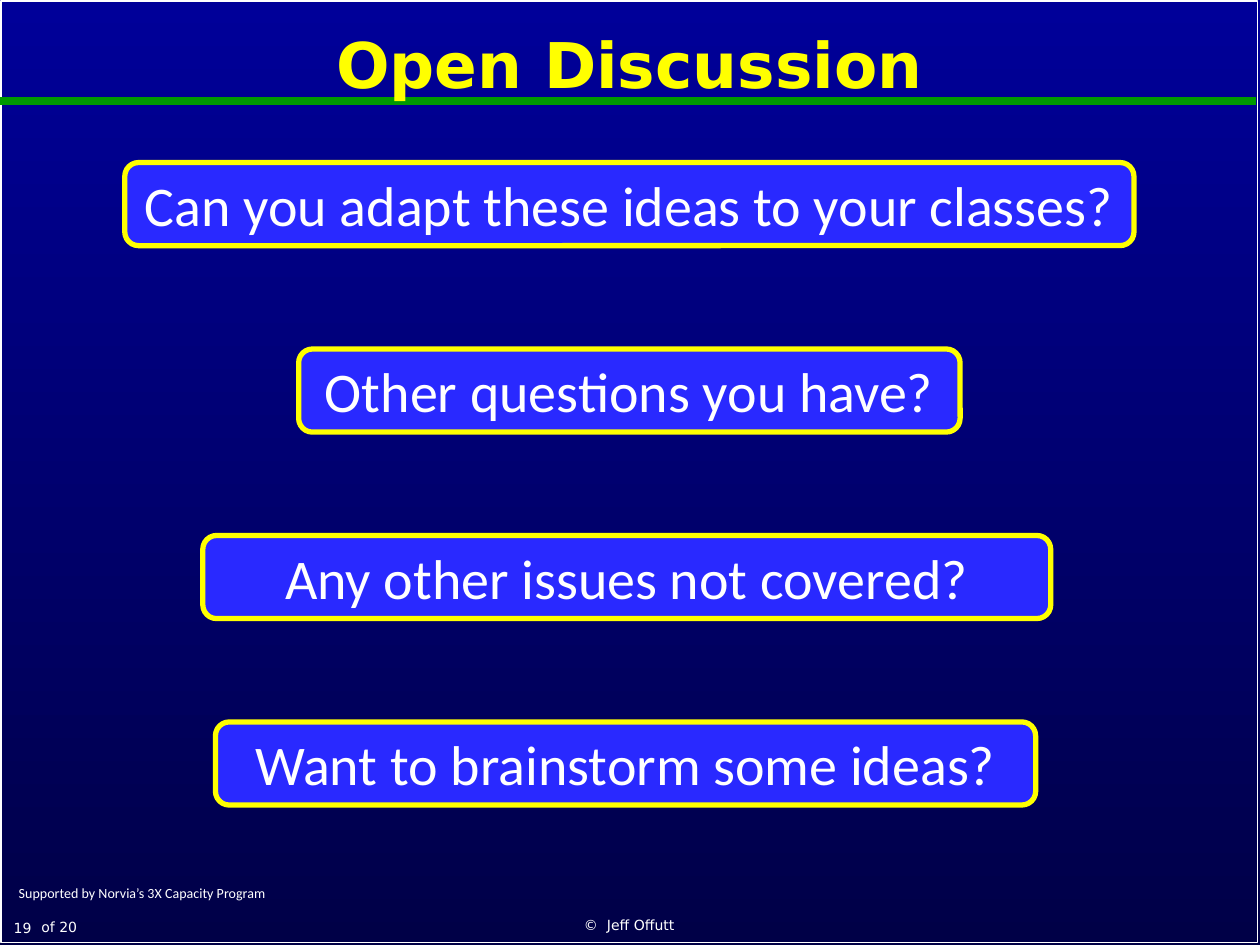
from dataclasses import dataclass

from lxml.etree import SubElement
from pptx import Presentation
from pptx.dml.color import RGBColor
from pptx.enum.shapes import MSO_CONNECTOR, MSO_SHAPE
from pptx.enum.text import MSO_ANCHOR, PP_ALIGN
from pptx.oxml.ns import qn
from pptx.slide import Slide
from pptx.text.text import TextFrame
from pptx.util import Inches, Pt

COLORS = {
    "sky": "000099",
    "night": "000047",
    "rule": "009900",
    "accent": "FFFF00",
    "panel": "2929FF",
    "text": "FFFFFF",
}
HEADING_FONT = "DejaVu Sans"
BODY_FONT = "Calibri"
FIRST_TOP = 1.29
PITCH = 1.48
QUESTION_HEIGHT = 0.66


@dataclass(frozen=True)
class Question:
    text: str
    left: float
    width: float


@dataclass(frozen=True)
class Note:
    text: str
    left: float
    top: float
    width: float
    height: float
    font: str = HEADING_FONT
    align: PP_ALIGN = PP_ALIGN.LEFT
    anchor: MSO_ANCHOR = MSO_ANCHOR.TOP


QUESTIONS = [
    Question("Can you adapt these ideas to your classes?", 0.99, 8.01),
    Question("Other questions you have?", 2.37, 5.25),
    Question("Any other issues not covered?", 1.61, 6.73),
    Question("Want to brainstorm some ideas?", 1.71, 6.51),
]

NOTES = [
    Note("of 20", 0.23, 7.24, 0.49, 0.24),
    Note("Supported by Norvia’s 3X Capacity Program", 0.05, 6.97, 2.25, 0.24, font=BODY_FONT),
    Note("©  Jeff Offutt", 3.41, 7.18, 3.17, 0.28,
         align=PP_ALIGN.CENTER, anchor=MSO_ANCHOR.BOTTOM),
    Note("19", 0.01, 7.19, 1.98, 0.29, anchor=MSO_ANCHOR.BOTTOM),
]


def rgb(name: str) -> RGBColor:
    return RGBColor.from_string(COLORS[name])


def write(frame: TextFrame, text: str, *, size: float, font: str, color: str = "text",
          bold: bool = False, align: PP_ALIGN = PP_ALIGN.LEFT,
          anchor: MSO_ANCHOR = MSO_ANCHOR.MIDDLE, wrap: bool = True,
          line_spacing: float = 1.0) -> None:
    frame.word_wrap = wrap
    frame.vertical_anchor = anchor
    paragraph = frame.paragraphs[0]
    paragraph.alignment = align
    paragraph.line_spacing = line_spacing
    run = paragraph.add_run()
    run.text = text
    run.font.size = Pt(size)
    run.font.name = font
    run.font.bold = bold
    run.font.color.rgb = rgb(color)


def paint_background(slide: Slide) -> None:
    fill = slide.background.fill
    fill.gradient()
    fill.gradient_angle = 270
    for stop, name in zip(fill.gradient_stops, ("sky", "night")):
        stop.color.rgb = rgb(name)


def draw_frame(slide: Slide) -> None:
    border = slide.shapes.add_shape(
        MSO_SHAPE.RECTANGLE, Inches(0.01), Inches(0.01), Inches(9.97), Inches(7.47))
    border.shadow.inherit = False
    border.fill.background()
    border.line.color.rgb = rgb("text")
    border.line.width = Pt(1)

    rule = slide.shapes.add_connector(
        MSO_CONNECTOR.STRAIGHT, Inches(0), Inches(0.8), Inches(9.97), Inches(0.8))
    rule.line.color.rgb = rgb("rule")
    rule.line.width = Pt(4.5)
    SubElement(rule._element.spPr, qn("a:effectLst"))


def draw_title(slide: Slide, text: str) -> None:
    title = slide.shapes.title
    title.left, title.top = Inches(0.01), Inches(0.12)
    title.width, title.height = Inches(9.97), Inches(0.84)
    write(title.text_frame, text, size=36, font=HEADING_FONT, color="accent",
          bold=True, align=PP_ALIGN.CENTER, line_spacing=0.9)
    tree = slide.shapes._spTree
    tree.remove(title._element)
    tree.append(title._element)


def draw_note(slide: Slide, note: Note) -> None:
    box = slide.shapes.add_textbox(
        Inches(note.left), Inches(note.top), Inches(note.width), Inches(note.height))
    write(box.text_frame, note.text, size=8, font=note.font, align=note.align,
          anchor=note.anchor, wrap=False)


def draw_question(slide: Slide, question: Question, top: float) -> None:
    panel = slide.shapes.add_shape(
        MSO_SHAPE.ROUNDED_RECTANGLE, Inches(question.left), Inches(top),
        Inches(question.width), Inches(QUESTION_HEIGHT))
    panel.shadow.inherit = False
    panel.fill.solid()
    panel.fill.fore_color.rgb = rgb("panel")
    panel.line.color.rgb = rgb("accent")
    panel.line.width = Pt(3)
    write(panel.text_frame, question.text, size=32, font=BODY_FONT, align=PP_ALIGN.CENTER)


def main() -> None:
    presentation = Presentation()
    presentation.slide_width, presentation.slide_height = Inches(10), Inches(7.5)
    slide = presentation.slides.add_slide(presentation.slide_layouts[5])
    paint_background(slide)
    draw_frame(slide)
    draw_title(slide, "Open Discussion")
    for note in NOTES:
        draw_note(slide, note)
    for row, question in enumerate(QUESTIONS):
        draw_question(slide, question, FIRST_TOP + row * PITCH)
    presentation.save("out.pptx")


if __name__ == "__main__":
    main()
